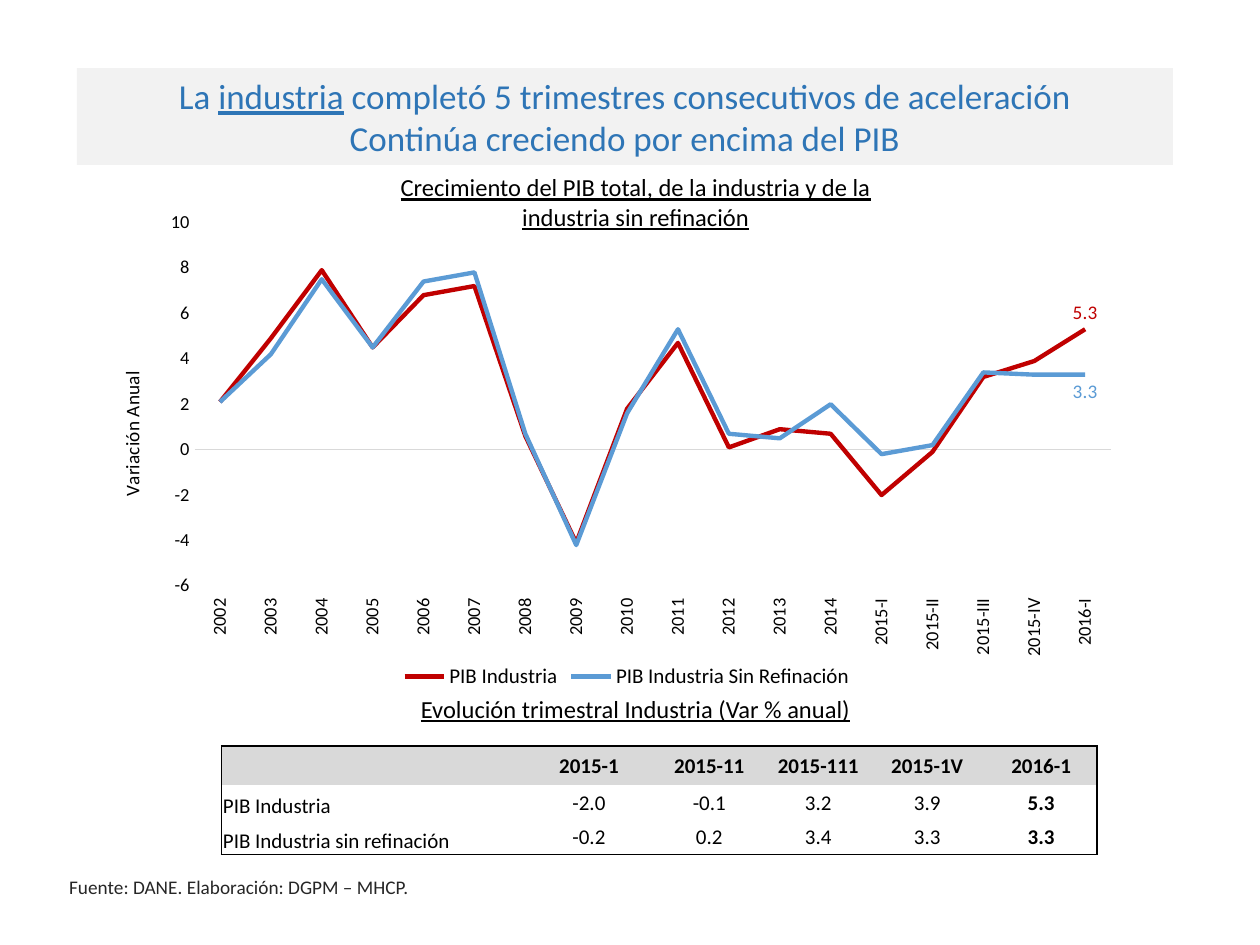
from dataclasses import dataclass

from lxml import etree
from pptx import Presentation
from pptx import util as u
from pptx.chart.data import CategoryChartData
from pptx.dml.color import RGBColor
from pptx.enum import chart as ch
from pptx.enum import shapes, text
from pptx.oxml import parse_xml
from pptx.oxml.ns import nsdecls, qn

FONT = "Calibri"
BLACK = RGBColor(0x00, 0x00, 0x00)
WHITE = RGBColor(0xFF, 0xFF, 0xFF)
INK = RGBColor(0x26, 0x26, 0x26)
TITLE_BLUE = RGBColor(0x2E, 0x75, 0xB6)
BAND_GREY = RGBColor(0xF2, 0xF2, 0xF2)
HEADER_GREY = RGBColor(0xD9, 0xD9, 0xD9)
RED = RGBColor(0xC0, 0x00, 0x00)
BLUE = RGBColor(0x5B, 0x9B, 0xD5)

GRID = u.Inches(0.1)  # the slide is 100 columns by 75 rows
NO_STYLE = "{2D5ABB26-0587-4C30-8999-92F81FD0307C}"


@dataclass(frozen=True)
class Box:
    column: float
    row: float
    columns: float
    rows: float

    def lengths(self) -> list[int]:
        return [round(GRID * n) for n in (self.column, self.row, self.columns, self.rows)]


@dataclass(frozen=True)
class Words:
    text: str
    underline: bool = False


@dataclass(frozen=True)
class Caption:
    box: Box
    words: Words
    size: float
    color: RGBColor = BLACK
    align: text.PP_ALIGN = text.PP_ALIGN.CENTER


@dataclass(frozen=True)
class Line:
    name: str
    color: RGBColor
    label_position: ch.XL_LABEL_POSITION
    values: tuple[float, ...]


TITLE = [
    [Words("La "), Words("industria", True), Words(" completó 5 trimestres consecutivos de aceleración")],
    [Words("Continúa creciendo por encima del PIB")],
]
CAPTIONS = [
    Caption(Box(29.7, 13.2, 41.5, 5.7),
            Words("Crecimiento del PIB total, de la industria y de la industria sin refinación", True), 14),
    Caption(Box(4.5, 69, 51.8, 2.9), Words("Fuente: DANE. Elaboración: DGPM – MHCP."),
            11, INK, text.PP_ALIGN.LEFT),
    Caption(Box(28.3, 54.6, 44.3, 3.4), Words("Evolución trimestral Industria (Var % anual)", True), 14),
]
PERIODS = [str(year) for year in range(2002, 2015)] + [
    "2015-I", "2015-II", "2015-III", "2015-IV", "2016-I"]
LINES = [
    Line("PIB Industria", RED, ch.XL_LABEL_POSITION.ABOVE,
         (2.1, 4.9, 7.9, 4.5, 6.8, 7.2, 0.6, -4.1, 1.8, 4.7, 0.1, 0.9, 0.7, -2, -0.1, 3.2, 3.9, 5.3)),
    Line("PIB Industria Sin Refinación", BLUE, ch.XL_LABEL_POSITION.BELOW,
         (2.1, 4.2, 7.5, 4.5, 7.4, 7.8, 0.7, -4.2, 1.6, 5.3, 0.7, 0.5, 2, -0.2, 0.2, 3.4, 3.3, 3.3)),
]
TABLE_COLUMNS = (10.3, 13.9, 9.9, 9.2, 8.1, 9.2, 8.9)
TABLE_ROWS = (
    ("", "", "2015-1", "2015-11", "2015-111", "2015-1V", "2016-1"),
    ("PIB Industria", "", "-2.0", "-0.1", "3.2", "3.9", "5.3"),
    ("PIB Industria sin refinación", "", "-0.2", "0.2", "3.4", "3.3", "3.3"),
)


def set_font(font, size: float, color: RGBColor = BLACK, bold: bool = False) -> None:
    font.name, font.size, font.bold = FONT, u.Pt(size), bold
    font.color.rgb = color


def add_words(paragraph, words: Words, size: float, color: RGBColor = BLACK, bold: bool = False) -> None:
    run = paragraph.add_run()
    run.text = words.text
    set_font(run.font, size, color, bold)
    if words.underline:
        run.font.underline = True


def add_title(slide) -> None:
    band = slide.shapes.add_shape(shapes.MSO_SHAPE.RECTANGLE, *Box(6.1, 5.4, 87, 7.7).lengths())
    band.shadow.inherit = False
    band.fill.solid()
    band.fill.fore_color.rgb = BAND_GREY
    band.line.fill.background()
    frame = band.text_frame
    frame.word_wrap = True
    for index, line in enumerate(TITLE):
        paragraph = frame.add_paragraph() if index else frame.paragraphs[0]
        paragraph.alignment = text.PP_ALIGN.CENTER
        for words in line:
            add_words(paragraph, words, 20, TITLE_BLUE)


def add_caption(slide, caption: Caption) -> None:
    frame = slide.shapes.add_textbox(*caption.box.lengths()).text_frame
    frame.word_wrap = True
    frame.paragraphs[0].alignment = caption.align
    add_words(frame.paragraphs[0], caption.words, caption.size, caption.color)


def style_axes(chart) -> None:
    periods, growth = chart.category_axis, chart.value_axis
    for axis in (periods, growth):
        axis.has_major_gridlines = False
        axis.major_tick_mark = axis.minor_tick_mark = ch.XL_TICK_MARK.NONE
        set_font(axis.tick_labels.font, 10.5)
    periods.tick_label_position = ch.XL_TICK_LABEL_POSITION.LOW
    periods.format.line.color.rgb = HEADER_GREY
    periods.format.line.width = u.Pt(0.75)
    growth.format.line.fill.background()
    growth.minimum_scale, growth.maximum_scale, growth.major_unit = -6, 10, 2
    growth.tick_labels.number_format = "0"
    growth.tick_labels.number_format_is_linked = False
    title = growth.axis_title.text_frame
    add_words(title.paragraphs[0], Words("Variación Anual"), 11)
    upright = periods._element.find(qn("c:txPr")).find(qn("a:bodyPr"))
    for body in (upright, title._txBody.find(qn("a:bodyPr"))):
        body.set("rot", "-5400000")
        body.set("vert", "horz")


def place_plot(chart, x: float, y: float, w: float, h: float) -> None:
    """Fix the inner plot area, in shares of the chart, and clear the backdrop."""
    plot_area = chart._chartSpace.chart.plotArea
    for layout in plot_area.findall(qn("c:layout")):
        plot_area.remove(layout)
    settings = {"layoutTarget": "inner", "xMode": "edge", "yMode": "edge", "x": x, "y": y, "w": w, "h": h}
    children = "".join(f'<c:{name} val="{value}"/>' for name, value in settings.items())
    plot_area.insert(0, parse_xml(
        f'<c:layout {nsdecls("c")}><c:manualLayout>{children}</c:manualLayout></c:layout>'))
    chart._chartSpace.chart.addnext(parse_xml(
        f'<c:spPr {nsdecls("c", "a")}><a:noFill/><a:ln><a:noFill/></a:ln></c:spPr>'))


def add_growth_chart(slide) -> None:
    data = CategoryChartData(number_format="0.0")
    data.categories = PERIODS
    for line in LINES:
        data.add_series(line.name, line.values)
    chart = slide.shapes.add_chart(ch.XL_CHART_TYPE.LINE, *Box(8.9, 16.1, 81.7, 39).lengths(), data).chart
    set_font(chart.font, 10.5)
    chart.has_title = False
    chart.has_legend = True
    chart.legend.position = ch.XL_LEGEND_POSITION.BOTTOM
    chart.legend.include_in_layout = False
    set_font(chart.legend.font, 12)
    chart.plots[0].vary_by_categories = False
    for line, series in zip(LINES, chart.plots[0].series):
        series.smooth = False
        series.marker.style = ch.XL_MARKER_STYLE.NONE
        series.format.line.color.rgb = line.color
        series.format.line.width = u.Pt(2.5)
        series.data_labels.show_value = False
        label = series.points[len(PERIODS) - 1].data_label
        set_font(label.font, 11, line.color)
        label.position = line.label_position
    style_axes(chart)
    place_plot(chart, 0.08, 0.04, 0.89, 0.74)


def add_border(cell, side: str) -> None:
    border = etree.SubElement(cell._tc.get_or_add_tcPr(), qn(f"a:ln{side}"), w=str(u.Pt(1)))
    fill = etree.SubElement(border, qn("a:solidFill"))
    etree.SubElement(fill, qn("a:srgbClr"), val=str(BLACK))


def add_quarter_table(slide) -> None:
    last_row, last_column = len(TABLE_ROWS) - 1, len(TABLE_COLUMNS) - 1
    box = Box(17.6, 59.2, sum(TABLE_COLUMNS), 8.25)
    table = slide.shapes.add_table(last_row + 1, last_column + 1, *box.lengths()).table
    table.horz_banding = table.first_row = False
    table._tbl.tblPr.find(qn("a:tableStyleId")).text = NO_STYLE
    for column, width in zip(table.columns, TABLE_COLUMNS):
        column.width = round(GRID * width)
    for r, row in enumerate(TABLE_ROWS):
        for c, value in enumerate(row):
            cell = table.cell(r, c)
            is_label = r > 0 and c == 0
            cell.margin_left = cell.margin_right = cell.margin_top = u.Inches(0.01)
            cell.margin_bottom = 0
            cell.vertical_anchor = text.MSO_ANCHOR.BOTTOM if is_label else text.MSO_ANCHOR.MIDDLE
            paragraph = cell.text_frame.paragraphs[0]
            paragraph.alignment = text.PP_ALIGN.LEFT if is_label else text.PP_ALIGN.CENTER
            add_words(paragraph, Words(value), 12, bold=r == 0 or c == last_column)
            edges = {"L": c == 0, "R": c == last_column, "T": r == 0, "B": r == last_row}
            for side in (side for side, outer in edges.items() if outer):
                add_border(cell, side)
            cell.fill.solid()
            cell.fill.fore_color.rgb = WHITE if r else HEADER_GREY
        if r:
            table.cell(r, 0).merge(table.cell(r, 1))


def main() -> None:
    presentation = Presentation()
    presentation.slide_width, presentation.slide_height = GRID * 100, GRID * 75
    slide = presentation.slides.add_slide(presentation.slide_layouts[6])
    add_title(slide)
    for caption in CAPTIONS:
        add_caption(slide, caption)
    add_growth_chart(slide)
    add_quarter_table(slide)
    presentation.save("out.pptx")


if __name__ == "__main__":
    main()
